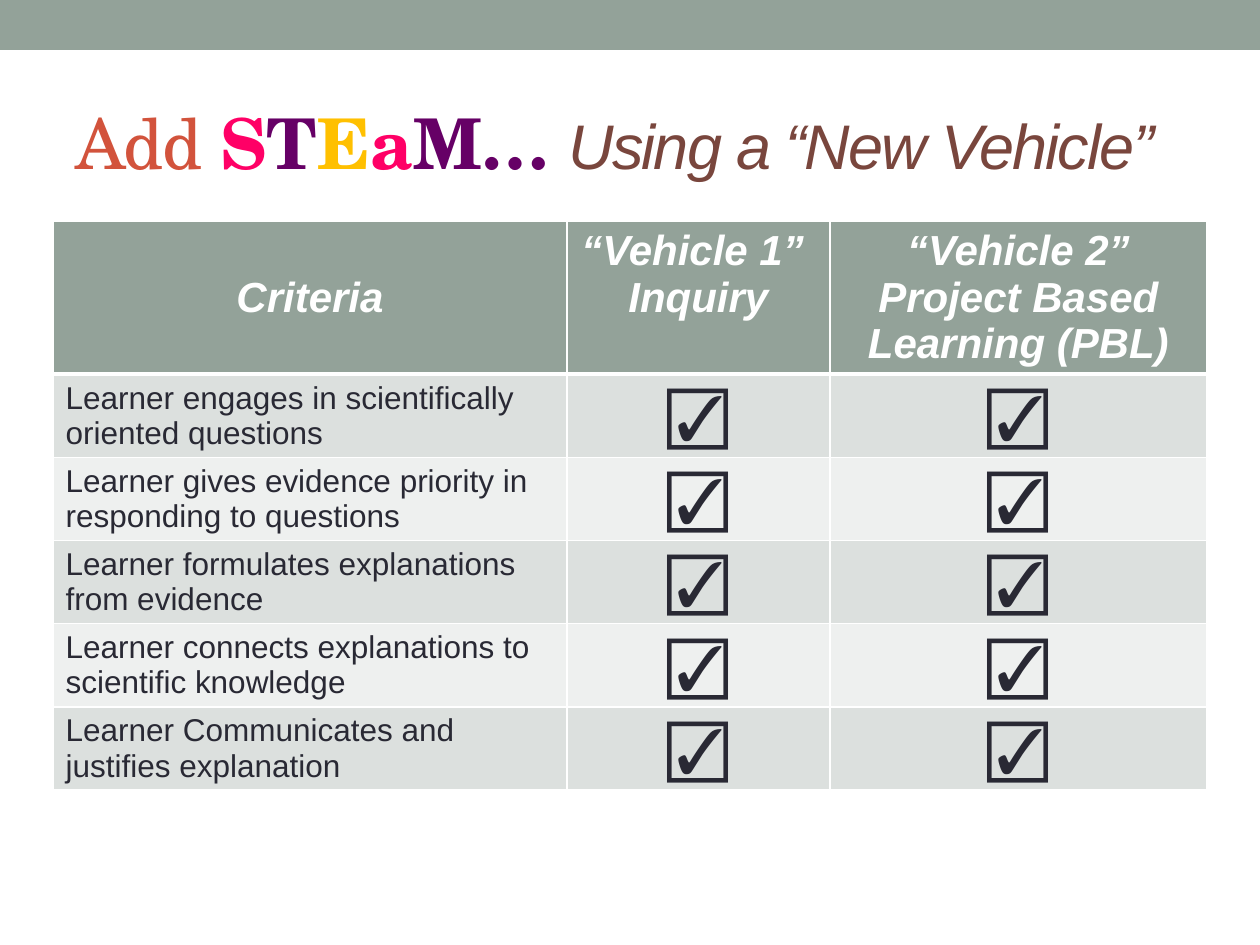
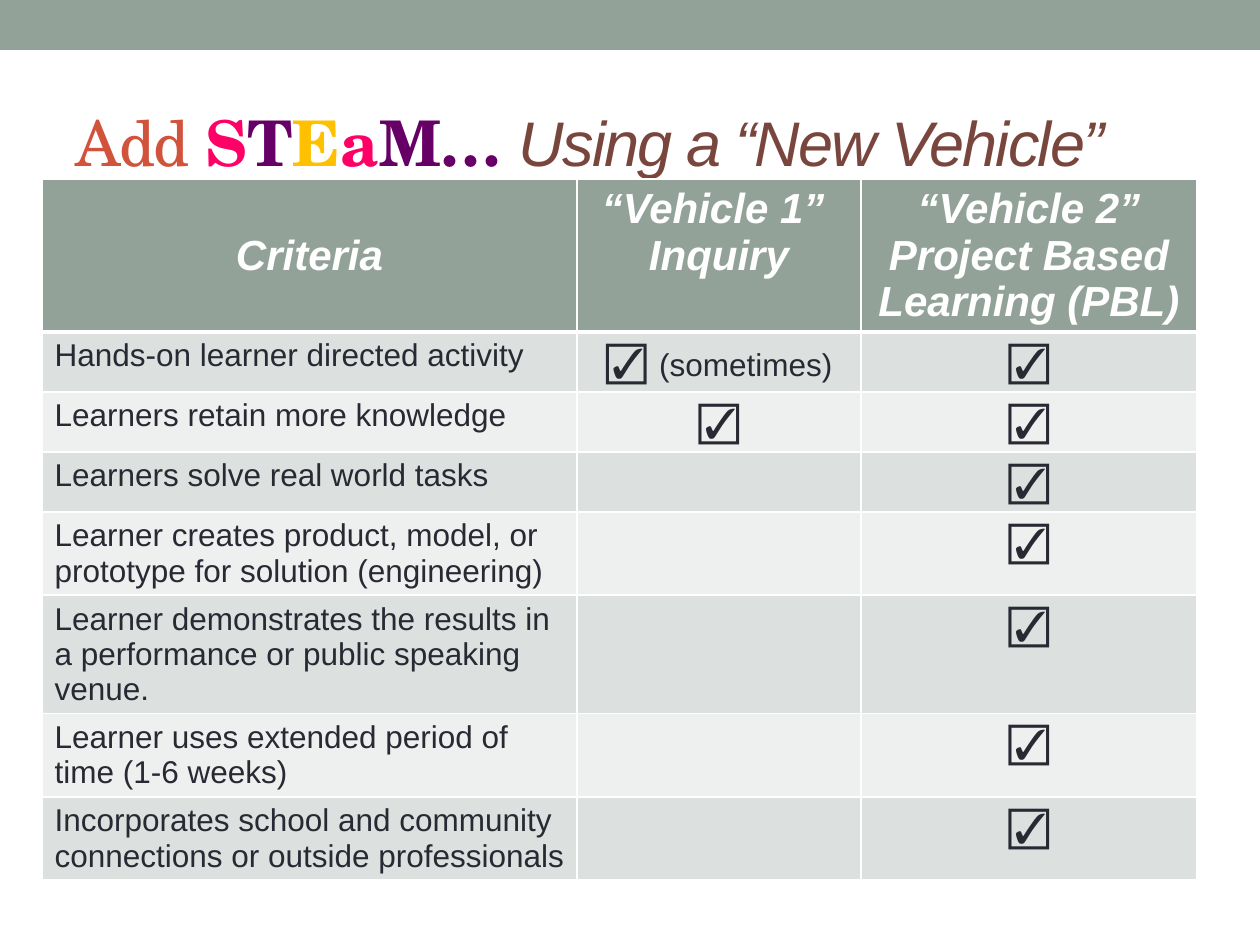
from dataclasses import dataclass

from lxml import etree
from pptx import Presentation
from pptx import util as u
from pptx.dml.color import RGBColor
from pptx.enum import shapes, text
from pptx.oxml.ns import qn

PX_PER_INCH = 126
CHECK = "☑"


@dataclass(frozen=True)
class Theme:
    sage: str = "93A299"
    white: str = "FFFFFF"
    ink: str = "292934"
    row_fills: tuple = ("DCE0DE", "EEF0EF")
    rust: str = "D2533C"
    brown: str = "79463D"
    pink: str = "FF0066"
    purple: str = "660066"
    gold: str = "FFC000"
    sans: str = "Arial"
    serif: str = "TeX Gyre Schola"
    title_size: int = 36
    header_size: int = 24
    body_size: int = 18
    thin_line: int = 1
    thick_line: int = 3


THEME = Theme()
HEADERS = ("Criteria", "“Vehicle 1” \nInquiry", "“Vehicle 2”\nProject Based Learning (PBL)")

# Each row: height, criterion, inquiry mark, project mark
INQUIRY_ROWS = [
    (83, criterion, CHECK, CHECK)
    for criterion in (
        "Learner engages in scientifically oriented questions",
        "Learner gives evidence priority in responding to questions",
        "Learner formulates explanations from evidence",
        "Learner connects explanations to scientific knowledge",
        "Learner Communicates and justifies explanation",
    )
]
PROJECT_ROWS = [
    (60, "Hands-on learner directed activity", CHECK + " (sometimes)", CHECK),
    (60, "Learners retain more knowledge", CHECK, CHECK),
    (60, "Learners solve real world tasks", "", CHECK),
    (83, "Learner creates product, model, or prototype for solution (engineering)", "", CHECK),
    (118, "Learner demonstrates the results in a performance or public speaking venue.", "", CHECK),
    (83, "Learner uses extended period of time (1-6 weeks)", "", CHECK),
    (83, "Incorporates school and community connections or outside professionals", "", CHECK),
]


def px(length):
    return u.Inches(length / PX_PER_INCH)


def format_run(run, size, color, font=THEME.sans, bold=False, italic=False):
    run.font.name = font
    run.font.size = u.Pt(size)
    run.font.bold = bold
    run.font.italic = italic
    run.font.color.rgb = RGBColor.from_string(color)


def add_band(slide, box):
    band = slide.shapes.add_shape(shapes.MSO_SHAPE.RECTANGLE, *map(px, box))
    band.shadow.inherit = False
    band.fill.solid()
    band.fill.fore_color.rgb = RGBColor.from_string(THEME.sage)
    band.line.fill.background()


def set_title(slide, box, steam_size):
    title = slide.shapes.title
    title.left, title.top, title.width, title.height = map(px, box)
    frame = title.text_frame
    frame.word_wrap = True
    frame.auto_size = text.MSO_AUTO_SIZE.NONE
    frame.vertical_anchor = text.MSO_ANCHOR.MIDDLE
    paragraph = frame.paragraphs[0]
    paragraph.alignment = text.PP_ALIGN.LEFT

    steam = (("S", THEME.pink), ("T", THEME.purple), ("E", THEME.gold),
             ("a", THEME.pink), ("M… ", THEME.purple))
    parts = [("Add ", steam_size, THEME.rust, THEME.serif)]
    parts += [(letters, steam_size, color, THEME.serif, True) for letters, color in steam]
    parts.append(("Using a “New Vehicle”", THEME.title_size, THEME.brown, THEME.sans, False, True))
    for words, *style in parts:
        run = paragraph.add_run()
        run.text = words
        format_run(run, *style)
        run.font._element.set("spc", "-100")


def set_borders(cell, **widths):
    """Draw white cell borders; widths maps L, R, T and B to points."""
    properties = cell._tc.get_or_add_tcPr()
    for side, width in widths.items():
        line = etree.SubElement(properties, qn("a:ln" + side), w=str(u.Pt(width)))
        fill = etree.SubElement(line, qn("a:solidFill"))
        etree.SubElement(fill, qn("a:srgbClr"), val=THEME.white)


def style_cell(cell, fill, top, bottom):
    set_borders(cell, L=THEME.thin_line, R=THEME.thin_line, T=top, B=bottom)
    cell.fill.solid()
    cell.fill.fore_color.rgb = RGBColor.from_string(fill)


def fill_header(cell, heading):
    style_cell(cell, THEME.sage, THEME.thin_line, THEME.thick_line)
    cell.text_frame.text = heading
    for paragraph in cell.text_frame.paragraphs:
        paragraph.alignment = text.PP_ALIGN.CENTER
        format_run(paragraph.runs[0], THEME.header_size, THEME.white, bold=True, italic=True)


def fill_mark(cell, mark, check_size):
    """Centre a check mark, followed by its remark if it has one."""
    paragraph = cell.text_frame.paragraphs[0]
    paragraph.alignment = text.PP_ALIGN.CENTER
    check, space, remark = mark.partition(" ")
    for words, size in ((check + space, check_size), (remark, THEME.body_size)):
        if words:
            run = paragraph.add_run()
            run.text = words
            format_run(run, size, THEME.ink)


def add_criteria_table(slide, left, top, widths, header_height, rows, check_size):
    heights = [header_height] + [row[0] for row in rows]
    frame = slide.shapes.add_table(len(heights), len(widths), px(left), px(top),
                                   px(sum(widths)), px(sum(heights)))
    table = frame.table
    table.horz_banding = False
    for column, width in zip(table.columns, widths):
        column.width = px(width)
    for row, height in zip(table.rows, heights):
        row.height = px(height)

    for column, heading in enumerate(HEADERS):
        fill_header(table.cell(0, column), heading)
    table.cell(0, 0).vertical_anchor = text.MSO_ANCHOR.MIDDLE

    for index, (_, criterion, *marks) in enumerate(rows):
        cells = [table.cell(index + 1, column) for column in range(len(widths))]
        line_above = THEME.thin_line if index else THEME.thick_line
        for cell in cells:
            style_cell(cell, THEME.row_fills[index % 2], line_above, THEME.thin_line)
        cells[0].text_frame.text = criterion
        format_run(cells[0].text_frame.paragraphs[0].runs[0], THEME.body_size, THEME.ink)
        for cell, mark in zip(cells[1:], marks):
            fill_mark(cell, mark, check_size)


def add_criteria_slide(presentation, steam_size, **table_settings):
    slide = presentation.slides.add_slide(presentation.slide_layouts[5])
    add_band(slide, (0, 0, 1260, 50))
    set_title(slide, (63, 73, 1134, 136), steam_size)
    add_criteria_table(slide, header_height=153, **table_settings)


def main():
    presentation = Presentation()
    presentation.slide_width, presentation.slide_height = px(1260), px(945)
    add_criteria_slide(presentation, steam_size=40, left=53, top=221,
                       widths=(514, 263, 377), rows=INQUIRY_ROWS, check_size=36)
    add_criteria_slide(presentation, steam_size=36, left=42, top=179,
                       widths=(535, 284, 336), rows=PROJECT_ROWS, check_size=24)
    presentation.save("out.pptx")


if __name__ == "__main__":
    main()
